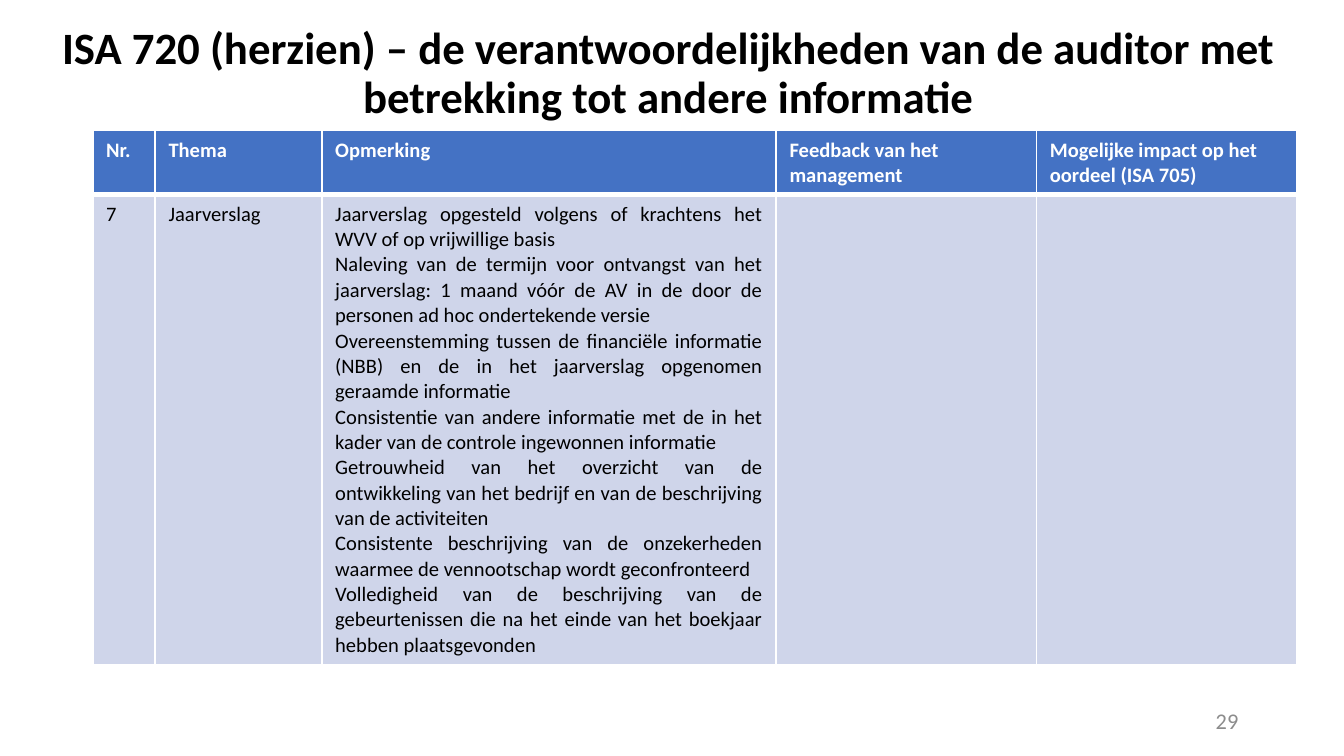
from lxml import etree
from pptx import Presentation
from pptx.dml.color import RGBColor
from pptx.enum.text import MSO_ANCHOR, PP_ALIGN
from pptx.oxml.ns import qn
from pptx.util import Pt

LEFT, CENTER, RIGHT, JUSTIFY = PP_ALIGN.LEFT, PP_ALIGN.CENTER, PP_ALIGN.RIGHT, PP_ALIGN.JUSTIFY
MIDDLE = MSO_ANCHOR.MIDDLE
FONT = "Calibri"
COLORS = {"header": "4472C4", "body": "CFD5EA", "white": "FFFFFF", "black": "000000", "number": "8C8C8C"}

TITLE = "ISA 720 (herzien) – de verantwoordelijkheden van de auditor met betrekking tot andere informatie"
PAGE_NUMBER = "29"
HEADERS = ["Nr.", "Thema", "Opmerking", "Feedback van het management", "Mogelijke impact op het oordeel (ISA 705)"]
REMARKS = [
    "Jaarverslag opgesteld volgens of krachtens het WVV of op vrijwillige basis",
    "Naleving van de termijn voor ontvangst van het jaarverslag: 1 maand vóór de AV in de door de personen ad hoc ondertekende versie",
    "Overeenstemming tussen de financiële informatie (NBB) en de in het jaarverslag opgenomen geraamde informatie",
    "Consistentie van andere informatie met de in het kader van de controle ingewonnen informatie",
    "Getrouwheid van het overzicht van de ontwikkeling van het bedrijf en van de beschrijving van de activiteiten",
    "Consistente beschrijving van de onzekerheden waarmee de vennootschap wordt geconfronteerd",
    "Volledigheid van de beschrijving van de gebeurtenissen die na het einde van het boekjaar hebben plaatsgevonden",
]
TOPIC = ["7", "Jaarverslag", "\n".join(REMARKS), "", ""]
COLUMN_WIDTHS = [33.4, 89.3, 243.4, 139.5, 139.5]
ROW_HEIGHTS = [34, 251]


def write(frame, text, size, color, align, bold=False):
    frame.text = text
    frame.word_wrap = True
    for paragraph in frame.paragraphs:
        paragraph.alignment = align
        paragraph.font.name = FONT
        paragraph.font.size = Pt(size)
        paragraph.font.bold = bold
        paragraph.font.color.rgb = RGBColor.from_string(COLORS[color])


def add_borders(cell, top, bottom):
    properties = cell._tc.get_or_add_tcPr()
    for side, width in (("lnL", 1), ("lnR", 1), ("lnT", top), ("lnB", bottom)):
        line = etree.SubElement(properties, qn(f"a:{side}"), w=str(Pt(width)))
        solid = etree.SubElement(line, qn("a:solidFill"))
        etree.SubElement(solid, qn("a:srgbClr"), val=COLORS["white"])


def main():
    prs = Presentation()
    prs.slide_width, prs.slide_height = Pt(720), Pt(405)
    slide = prs.slides.add_slide(prs.slide_layouts[5])

    title = slide.shapes.title
    title.left, title.top, title.width, title.height = Pt(0), Pt(0.7), Pt(716), Pt(78.5)
    write(title.text_frame, TITLE, 24, "black", CENTER, True)
    title.text_frame.vertical_anchor = MIDDLE
    title.text_frame.paragraphs[0].line_spacing = 0.9

    table = slide.shapes.add_table(2, len(HEADERS), Pt(49.7), Pt(70), Pt(sum(COLUMN_WIDTHS)),
                                   Pt(sum(ROW_HEIGHTS))).table
    for column, width in zip(table.columns, COLUMN_WIDTHS):
        column.width = Pt(width)
    for row, height in zip(table.rows, ROW_HEIGHTS):
        row.height = Pt(height)
    for r, texts in enumerate((HEADERS, TOPIC)):
        is_header = r == 0
        for c, text in enumerate(texts):
            cell = table.cell(r, c)
            add_borders(cell, 1 if is_header else 3, 3 if is_header else 1)
            cell.fill.solid()
            cell.fill.fore_color.rgb = RGBColor.from_string(COLORS["header" if is_header else "body"])
            write(cell.text_frame, text, 11, "white" if is_header else "black",
                  LEFT if is_header or c == 0 else JUSTIFY, is_header)

    number = slide.shapes.add_textbox(Pt(508.5), Pt(375.4), Pt(162), Pt(21.6)).text_frame
    write(number, PAGE_NUMBER, 12, "number", RIGHT)
    number.vertical_anchor = MIDDLE

    prs.save("out.pptx")


if __name__ == "__main__":
    main()
